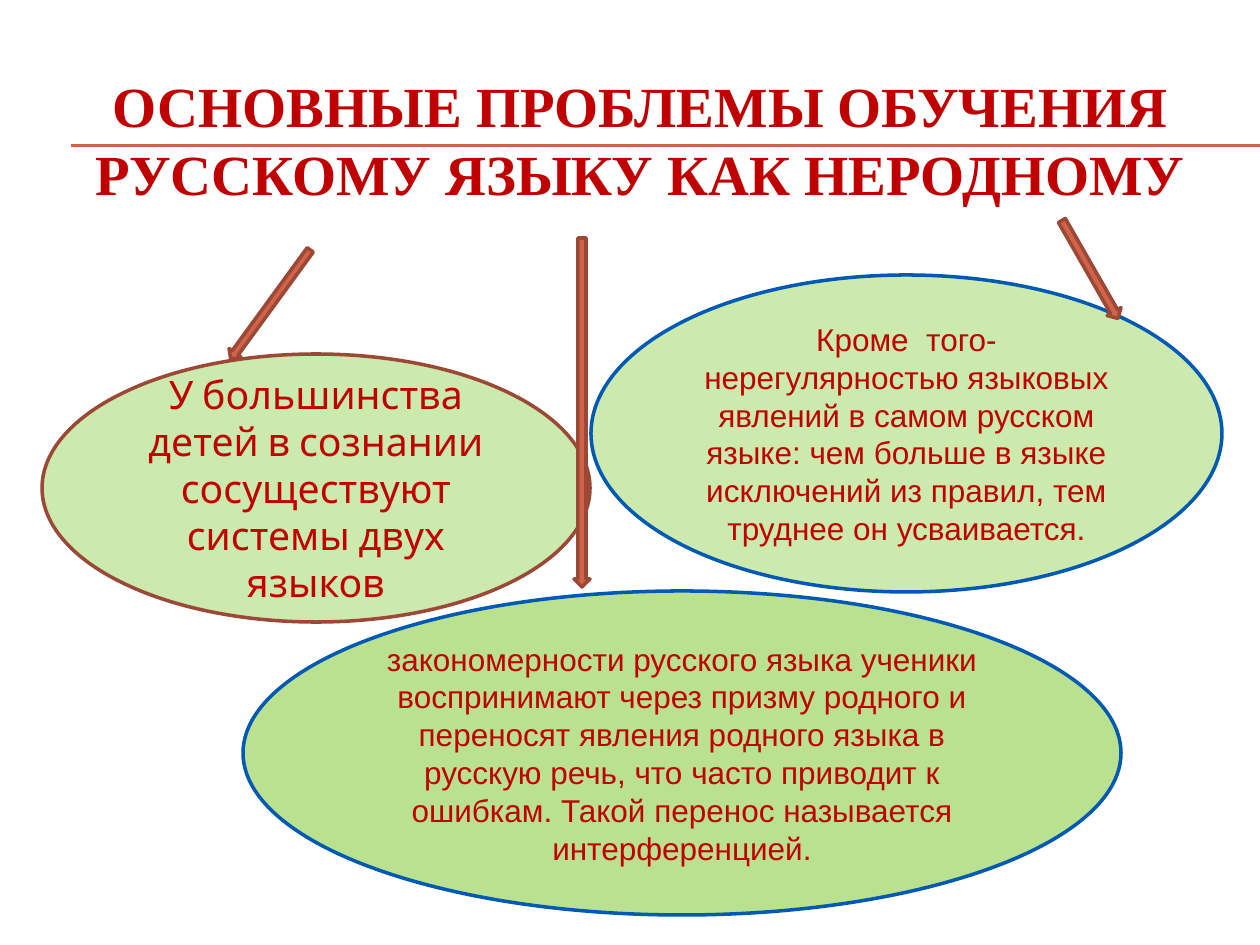
import pptx
import pptx.util
import pptx.dml.color
import pptx.enum.shapes
import pptx.enum.text
import pptx.oxml.ns
import lxml.etree

HUE = {"red": "C00000", "green": "92D050", "blue": "0059B2",
       "rust": "D16349", "dark": "9B4936"}
KIND = pptx.enum.shapes.MSO_SHAPE
PX = 914400 / 126


def px(num):
    """Turn px into EMU."""
    return pptx.util.Emu(round(num * PX))


def rgb(name):
    """Look up a colour by name."""
    return pptx.dml.color.RGBColor.from_string(HUE[name])


def place(item, box):
    """Set left, top, width and height in px."""
    for key, num in zip(("left", "top", "width", "height"), box):
        setattr(item, key, px(num))


def write(item, text, size, face, bold=False):
    """Put centred red text into a shape."""
    frame = item.text_frame
    form = {"word_wrap": True, "auto_size": pptx.enum.text.MSO_AUTO_SIZE.NONE,
            "vertical_anchor": pptx.enum.text.MSO_ANCHOR.MIDDLE}
    for key, val in form.items():
        setattr(frame, key, val)
    para = frame.paragraphs[0]
    para.alignment = pptx.enum.text.PP_ALIGN.CENTER
    run = para.add_run()
    run.text = text
    look = {"size": pptx.util.Pt(size), "name": face, "bold": bold}
    for key, val in look.items():
        setattr(run.font, key, val)
    run.font.color.rgb = rgb("red")


def shape(slide, kind, box, fill, edge):
    """Add a filled and outlined preset shape."""
    item = slide.shapes.add_shape(kind, *map(px, box))
    item.shadow.inherit = False
    item.fill.solid()
    item.fill.fore_color.rgb = rgb(fill)
    item.line.color.rgb = rgb(edge)
    item.line.width = pptx.util.Pt(2)
    return item


def oval(slide, box, alpha, edge, text, size, face):
    """Add a see-through green ellipse with text."""
    item = shape(slide, KIND.OVAL, box, "green", edge)
    qn = pptx.oxml.ns.qn
    tint = item.element.spPr.find(qn("a:solidFill")).find(qn("a:srgbClr"))
    lxml.etree.SubElement(tint, qn("a:alpha"), val=str(alpha * 1000))
    write(item, text, size, face)


def arrow(slide, box, turn):
    """Add a turned block arrow."""
    item = shape(slide, KIND.DOWN_ARROW, box, "rust", "dark")
    item.rotation = turn


def rule(slide, y):
    """Add a thin line that runs to the right edge."""
    line = slide.shapes.add_connector(
        pptx.enum.shapes.MSO_CONNECTOR.STRAIGHT, px(71), px(y), px(1260), px(y))
    line.line.color.rgb = rgb("rust")
    line.line.width = pptx.util.Pt(0.75)
    lxml.etree.SubElement(line.element.spPr, pptx.oxml.ns.qn("a:effectLst"))


def head(slide, text):
    """Format the title and lift it above the lines."""
    item = slide.shapes.title
    place(item, (42, 63, 1197, 220))
    write(item, text, 32.4, "Times New Roman", True)
    item.text_frame.margin_bottom = px(74)
    slide.shapes.element.append(item.element)


def main():
    """Build the slide."""
    deck = pptx.Presentation()
    deck.slide_width, deck.slide_height = px(1260), px(945)
    slide = deck.slides.add_slide(deck.slide_layouts[5])
    for y in (145, 146):
        rule(slide, y)
    head(slide, "ОСНОВНЫЕ ПРОБЛЕМЫ ОБУЧЕНИЯ РУССКОМУ ЯЗЫКУ КАК НЕРОДНОМУ")
    oval(slide, (591, 275, 631, 317), 46, "blue",
         "Кроме  того- нерегулярностью языковых явлений в самом русском "
         "языке: чем больше в языке исключений из правил, тем труднее он "
         "усваивается.", 18, "Arial")
    oval(slide, (243, 591, 878, 324), 63, "blue",
         "закономерности русского языка ученики воспринимают через призму "
         "родного и переносят явления родного языка в русскую речь, что часто "
         "приводит к ошибкам. Такой перенос называется интерференцией.",
         18, "Arial")
    oval(slide, (42, 354, 548, 268), 46, "dark",
         "У большинства детей в сознании сосуществуют системы двух языков",
         22.4, "Cabin")
    for box, turn in (((263, 237, 15, 135), 36.1),
                      ((1082, 213, 16, 113), 330.2),
                      ((574, 238, 16, 349), 0)):
        arrow(slide, box, turn)
    deck.save("out.pptx")


if __name__ == "__main__":
    main()
